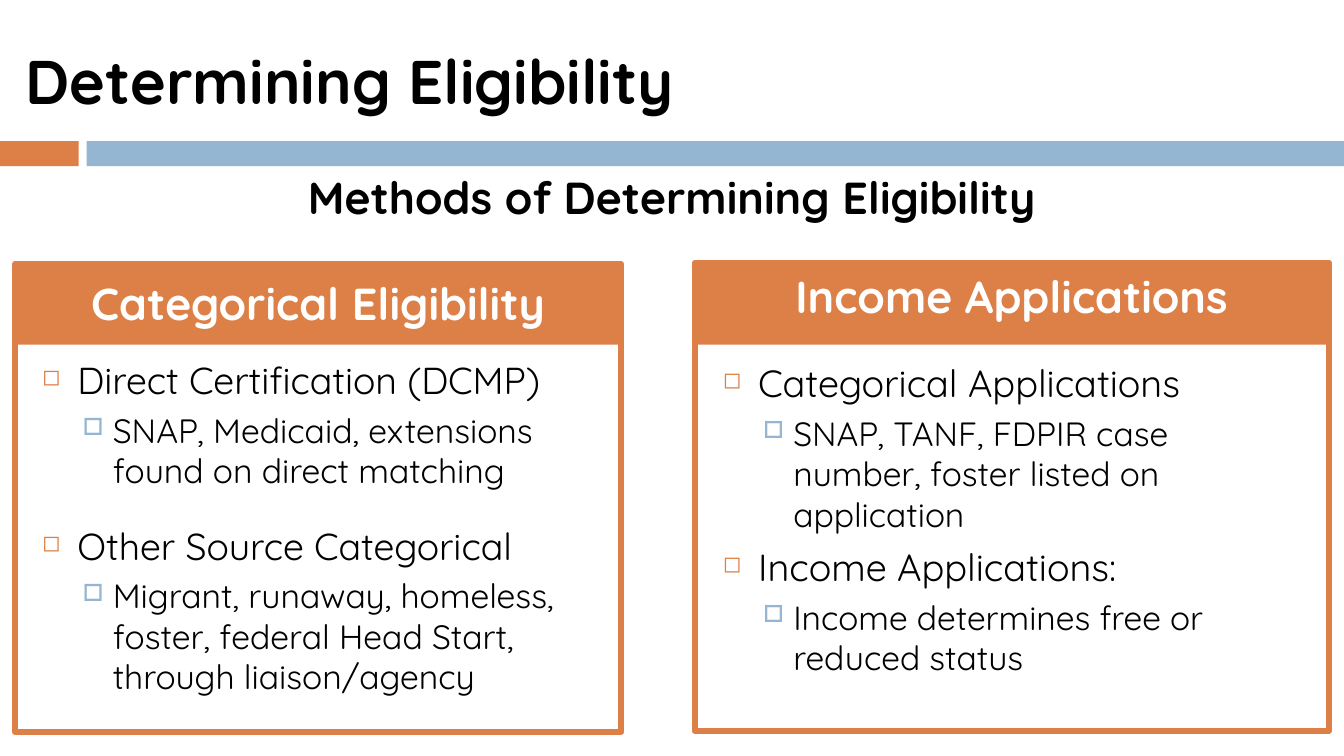
from pptx import Presentation
from pptx.dml.color import RGBColor
from pptx.enum.shapes import MSO_SHAPE
from pptx.enum.text import MSO_ANCHOR, PP_ALIGN
from pptx.oxml import parse_xml
from pptx.oxml.ns import nsdecls
from pptx.util import Inches, Pt

RECTANGLE = MSO_SHAPE.RECTANGLE
TOP, MIDDLE = MSO_ANCHOR.TOP, MSO_ANCHOR.MIDDLE
LEFT, CENTER = PP_ALIGN.LEFT, PP_ALIGN.CENTER

WIDTH, HEIGHT = Inches(13.33), Inches(7.5)
FONT = "Quicksand"
ORANGE, BLUE, BLACK, WHITE = "DD8047", "94B6D2", "000000", "FFFFFF"
MARGIN = 1.13
BULLETS = [
    {"symbol": "◻", "color": ORANGE, "percent": 60, "indent": 0.35, "hanging": 0.35, "before": 7},
    {"symbol": "□", "color": BLUE, "percent": 70, "indent": 0.7, "hanging": 0.3, "before": 5.5},
]


def color(value):
    return RGBColor.from_string(value)


def place(left, top, width, height):
    return [round(WIDTH * left / 100), round(HEIGHT * top / 100),
            round(WIDTH * width / 100), round(HEIGHT * height / 100)]


def add_rectangle(slide, area, fill=None, line=None):
    shape = slide.shapes.add_shape(RECTANGLE, *place(*area))
    shape.shadow.inherit = False
    if fill:
        shape.fill.solid()
        shape.fill.fore_color.rgb = color(fill)
    else:
        shape.fill.background()
    if line:
        shape.line.color.rgb = color(line)
        shape.line.width = Pt(4.5)
    else:
        shape.line.fill.background()


def add_frame(slide, area, anchor=TOP):
    frame = slide.shapes.add_textbox(*place(*area)).text_frame
    frame.word_wrap = True
    frame.vertical_anchor = anchor
    return frame


def write(paragraph, text, size, bold=False, text_color=BLACK, align=LEFT, before=0):
    paragraph.alignment = align
    paragraph.space_before = Pt(before)
    run = paragraph.add_run()
    run.text = text
    run.font.name = FONT
    run.font.size = Pt(size)
    run.font.bold = bold
    run.font.color.rgb = color(text_color)


def add_bullet(paragraph, bullet):
    properties = paragraph._p.get_or_add_pPr()
    properties.set("marL", str(Inches(bullet["indent"])))
    properties.set("indent", str(-Inches(bullet["hanging"])))
    namespace = nsdecls("a")
    for element in (
        f'<a:buClr {namespace}><a:srgbClr val="{bullet["color"]}"/></a:buClr>',
        f'<a:buSzPct {namespace} val="{bullet["percent"] * 1000}"/>',
        f'<a:buChar {namespace} char="{bullet["symbol"]}"/>',
    ):
        properties.append(parse_xml(element))


def add_list(slide, area, items, sizes, group_gap=0):
    frame = add_frame(slide, area)
    for index, (level, text) in enumerate(items):
        paragraph = frame.add_paragraph() if index else frame.paragraphs[0]
        paragraph.level = level
        bullet = BULLETS[level]
        gap = group_gap if index and level == 0 else 0
        write(paragraph, text, sizes[level], before=bullet["before"] + gap)
        add_bullet(paragraph, bullet)


def add_panel(slide, left, width, heading, heading_top, frame_top):
    add_rectangle(slide, (left, 34.53, width, 11.07), fill=ORANGE)
    add_rectangle(slide, (left, frame_top, width, 61.87), line=ORANGE)
    frame = add_frame(slide, (left, heading_top, width, 9.33))
    write(frame.paragraphs[0], heading, 32, bold=True, text_color=WHITE, align=CENTER, before=7)


def main():
    presentation = Presentation()
    presentation.slide_width, presentation.slide_height = WIDTH, HEIGHT
    slide = presentation.slides.add_slide(presentation.slide_layouts[6])

    add_rectangle(slide, (0, 18.67, 5.85, 3.33), fill=ORANGE)
    add_rectangle(slide, (6.45, 18.67, 93.55, 3.33), fill=BLUE)
    title = add_frame(slide, (MARGIN, 3.33, 50.49, 14.4), anchor=MIDDLE)
    write(title.paragraphs[0], "Determining Eligibility", 44, bold=True)
    subtitle = add_frame(slide, (MARGIN, 21.73, 100 - 2 * MARGIN, 8.53))
    write(subtitle.paragraphs[0], "Methods of Determining Eligibility", 32, bold=True, align=CENTER)

    add_panel(slide, MARGIN, 45.09, "Categorical Eligibility", 35.87, 34.93)
    add_list(slide, (2.4, 46.53, 42.54, 48), [
        (0, "Direct Certification (DCMP)"),
        (1, "SNAP, Medicaid, extensions found on direct matching"),
        (0, "Other Source Categorical"),
        (1, "Migrant, runaway, homeless, foster, federal Head Start, through liaison/agency"),
    ], sizes=(26.8, 24.1), group_gap=16)

    add_panel(slide, 51.69, 47.19, "Income Applications", 34.93, 34.8)
    add_list(slide, (53.04, 46.93, 44.56, 52.27), [
        (0, "Categorical Applications"),
        (1, "SNAP, TANF, FDPIR case number, foster listed on application"),
        (0, "Income Applications:"),
        (1, "Income determines free or reduced status"),
    ], sizes=(27, 24))

    presentation.save("out.pptx")


if __name__ == "__main__":
    main()
